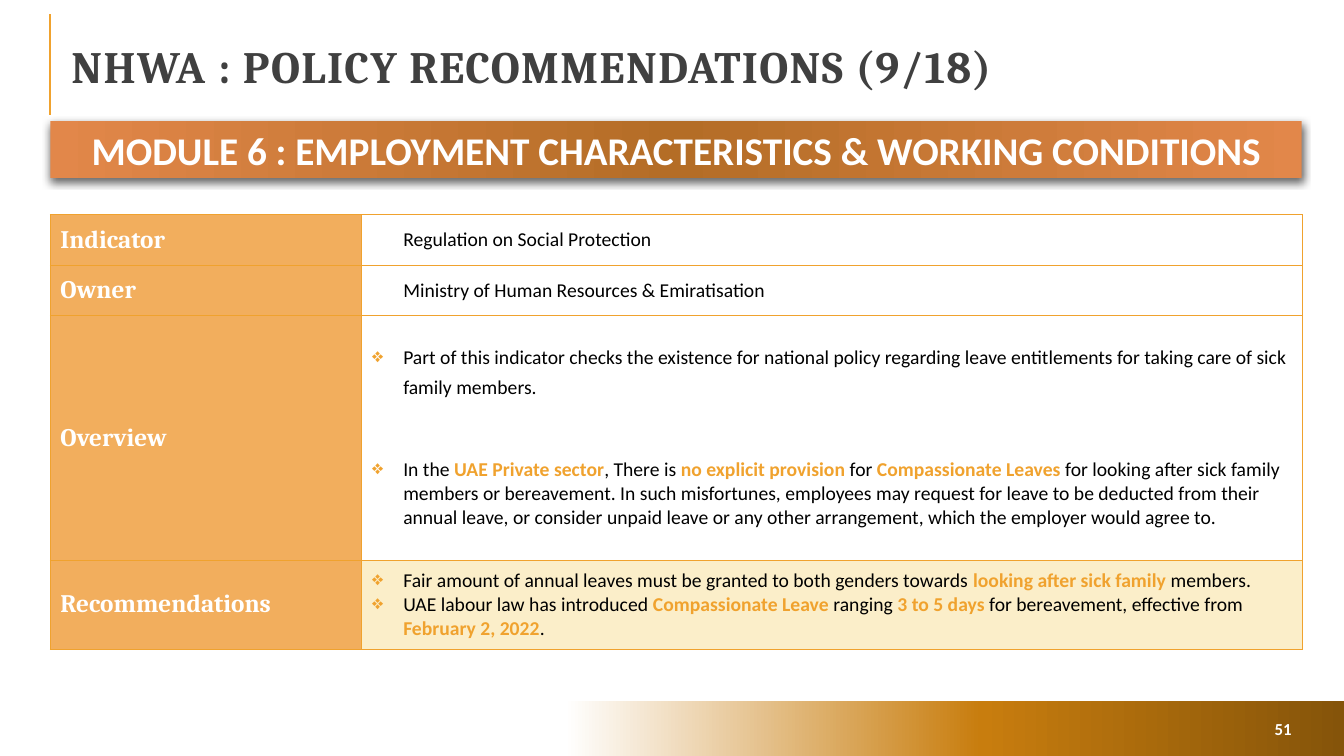
from itertools import cycle
from lxml.etree import SubElement
from pptx import Presentation
from pptx.dml.color import RGBColor
from pptx.enum.shapes import MSO_CONNECTOR, MSO_SHAPE
from pptx.enum.text import MSO_ANCHOR, PP_ALIGN
from pptx.oxml import parse_xml
from pptx.oxml.ns import nsdecls, qn
from pptx.util import Inches, Pt

GOLD = RGBColor(0xF0, 0xA2, 0x2E)
LABEL = RGBColor(0xF2, 0xAE, 0x5D)
CREAM = RGBColor(0xFB, 0xEE, 0xC9)
WHITE = RGBColor(0xFF, 0xFF, 0xFF)
BLACK = RGBColor(0x00, 0x00, 0x00)
GREY = RGBColor(0x40, 0x40, 0x40)
AMBER = RGBColor(0xC8, 0x7D, 0x0E)
BROWN = RGBColor(0x85, 0x54, 0x0A)
COPPER = RGBColor(0xB4, 0x6D, 0x26)
CORAL = RGBColor(0xE2, 0x87, 0x4A)

HEAD = "Cambria"
BODY = "Calibri"

FACTS = [
    ("Indicator", 0.5, ["Regulation on Social Protection"]),
    ("Owner", 0.5, ["Ministry of Human Resources & Emiratisation"]),
]
OVERVIEW = [
    ["Part of this indicator checks the existence for national policy regarding "
     "leave entitlements for taking care of sick family members."],
    ["In the ", "UAE Private sector", ", There is ", "no explicit provision ",
     "for", " Compassionate Leaves ",
     "for looking after sick family members or bereavement. In such misfortunes, "
     "employees may request for leave to be deducted from their annual leave, or "
     "consider unpaid leave or any other arrangement, which the employer would "
     "agree to."],
]
ADVICE = [
    ["Fair amount of annual leaves must be granted to both genders towards ",
     "looking after sick family ", "members."],
    ["UAE labour law has introduced ", "Compassionate Leave ", "ranging ",
     "3 to 5 days ", "for bereavement, effective from ", "February 2, 2022", "."],
]


class Deck:
    def __init__(self):
        self.show = Presentation()
        self.show.slide_width = Inches(13.33)
        self.show.slide_height = Inches(7.5)
        self.slide = self.show.slides.add_slide(self.show.slide_layouts[6])
        self.shapes = self.slide.shapes

    def run(self, para, text, size, color, bold=False, face=BODY):
        run = para.add_run()
        run.text = text
        font = run.font
        font.name, font.size, font.bold = face, Pt(size), bold
        font.color.rgb = color
        return run

    def rule(self, x, top, end):
        line = self.shapes.add_connector(
            MSO_CONNECTOR.STRAIGHT, Inches(x), Inches(end), Inches(x), Inches(top))
        line.line.color.rgb = GOLD
        line.line.width = Pt(1.5)
        SubElement(line._element.spPr, qn("a:effectLst"))

    def band(self, box, stops):
        shape = self.shapes.add_shape(MSO_SHAPE.RECTANGLE, *map(Inches, box))
        shape.shadow.inherit = False
        shape.line.fill.background()
        shape.fill.gradient()
        shape.fill.gradient_angle = 0
        ramp = shape._element.spPr.find(".//" + qn("a:gsLst"))
        for stop in list(ramp):
            ramp.remove(stop)
        for place, color in stops:
            stop = SubElement(ramp, qn("a:gs"), pos=str(place * 1000))
            SubElement(stop, qn("a:srgbClr"), val=str(color))
        return shape

    def shade(self, shape):
        glow = shape._element.spPr.find(qn("a:effectLst"))
        glow.append(parse_xml(
            f'<a:outerShdw {nsdecls("a")} blurRad="{Pt(6)}" dist="{Pt(2)}" '
            f'dir="5400000" rotWithShape="0"><a:srgbClr val="{BLACK}">'
            '<a:alpha val="60000"/></a:srgbClr></a:outerShdw>'))

    def text(self, box, words, size, color, face=BODY, align=PP_ALIGN.LEFT):
        frame = self.shapes.add_textbox(*map(Inches, box)).text_frame
        frame.word_wrap = True
        frame.vertical_anchor = MSO_ANCHOR.MIDDLE
        para = frame.paragraphs[0]
        para.alignment = align
        return para, self.run(para, words, size, color, True, face)

    def table(self, box, widths, heights):
        grid = self.shapes.add_table(
            len(heights), len(widths), *map(Inches, box)).table
        grid.first_row = grid.horz_banding = False
        for col, width in zip(grid.columns, widths):
            col.width = Inches(width)
        for row, height in zip(grid.rows, heights):
            row.height = Inches(height)
        return grid

    def cell(self, cell, color):
        cell.vertical_anchor = MSO_ANCHOR.MIDDLE
        cell.fill.solid()
        cell.fill.fore_color.rgb = color
        for spot, side in enumerate("LRTB"):
            cell._tc.tcPr.insert(spot, parse_xml(
                f'<a:ln{side} {nsdecls("a")} w="{Pt(0.75)}"><a:solidFill>'
                f'<a:srgbClr val="{GOLD}"/></a:solidFill></a:ln{side}>'))
        return cell.text_frame

    def item(self, para, parts, mark=True):
        props = para._p.get_or_add_pPr()
        props.set("marL", str(Inches(0.31)))
        if mark:
            props.set("indent", str(-Inches(0.31)))
            tint = SubElement(props, qn("a:buClr"))
            SubElement(tint, qn("a:srgbClr"), val=str(GOLD))
            SubElement(props, qn("a:buChar"), char="❖")
        for part, key in zip(parts, cycle([False, True])):
            self.run(para, part, 14, GOLD if key else BLACK, key)

    def list(self, frame, items, mark=True):
        for spot, parts in enumerate(items):
            para = frame.add_paragraph() if spot else frame.paragraphs[0]
            self.item(para, parts, mark)
        return frame.paragraphs


def main():
    deck = Deck()
    deck.rule(0.5, 0.14, 1.14)
    deck.band((0, 6.95, 13.33, 0.55), [(42, WHITE), (73, AMBER), (100, BROWN)])

    para, run = deck.text((0.61, 0.28, 12.3, 0.84),
                          "NHWA : POLICY RECOMMENDATIONS (9/18)", 32, GREY, HEAD)
    para.line_spacing = 0.8
    run.font._element.set("spc", "100")

    rows = [(name, high, [parts], False, WHITE) for name, high, parts in FACTS]
    rows += [("Overview", 2.43, OVERVIEW, True, WHITE),
             ("Recommendations", 0.88, ADVICE, True, CREAM)]
    grid = deck.table((0.5, 2.13, 12.42, 4.31), [3.09, 9.33],
                      [row[1] for row in rows])
    for spot, (name, high, items, mark, color) in enumerate(rows):
        label = deck.cell(grid.cell(spot, 0), LABEL)
        deck.run(label.paragraphs[0], name, 18, WHITE, True, HEAD)
        paras = deck.list(deck.cell(grid.cell(spot, 1), color), items, mark)
        if items is OVERVIEW:
            for para, gap in zip(paras, (6, 35)):
                para.space_before, para.space_after = Pt(gap), Pt(6)
            deck.run(paras[0], " ", 18, BLACK)

    deck.text((11.85, 7.08, 1.06, 0.3), "51", 12, WHITE, align=PP_ALIGN.RIGHT)

    banner = deck.band((0.5, 1.2, 12.41, 0.57),
                       [(0, CORAL), (50, COPPER), (100, CORAL)])
    deck.shade(banner)
    para = banner.text_frame.paragraphs[0]
    para.alignment = PP_ALIGN.CENTER
    deck.run(para, "MODULE 6 : EMPLOYMENT CHARACTERISTICS & WORKING CONDITIONS",
             28, WHITE, True)

    deck.show.save("out.pptx")


if __name__ == "__main__":
    main()
